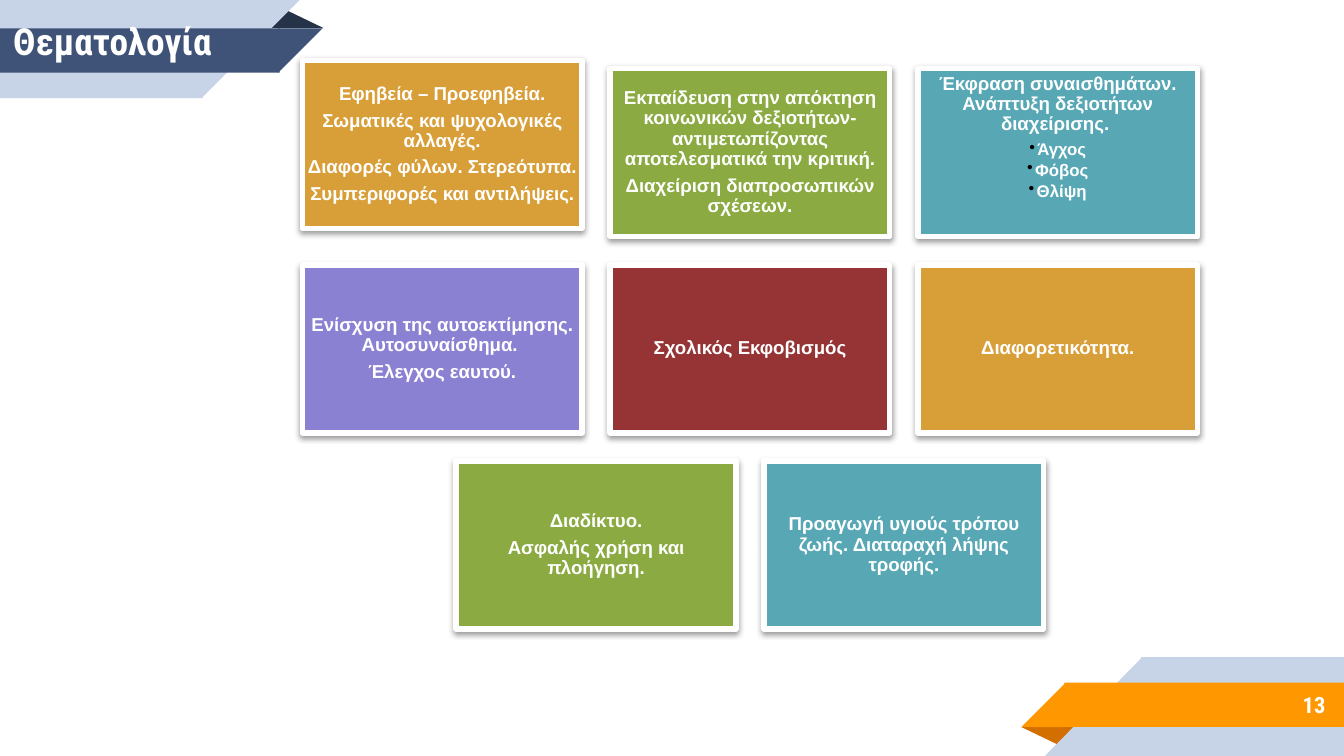
"""Builds the topics slide: eight cards in centred rows between two corner ribbons."""
from lxml.etree import SubElement
from pptx import Presentation
from pptx.dml.color import RGBColor
from pptx.enum.shapes import MSO_SHAPE as Shape
from pptx.enum.text import MSO_ANCHOR as Anchor, PP_ALIGN as Align
from pptx.oxml import parse_xml
from pptx.oxml.ns import nsdecls, qn
from pptx.util import Inches, Pt

WHITE = RGBColor(0xFF, 0xFF, 0xFF)
PALE = RGBColor(0xC7, 0xD3, 0xE6)
NAVY = RGBColor(0x3F, 0x53, 0x78)
DARK_NAVY = RGBColor(0x26, 0x32, 0x48)
ORANGE = RGBColor(0xFF, 0x98, 0x00)
DARK_ORANGE = RGBColor(0xD2, 0x6F, 0x00)
AMBER = RGBColor(0xD8, 0x9F, 0x39)
GREEN = RGBColor(0x8B, 0xAB, 0x42)
TEAL = RGBColor(0x57, 0xA7, 0xB5)
VIOLET = RGBColor(0x8B, 0x81, 0xD2)
RED = RGBColor(0x96, 0x33, 0x34)

PAGE_WIDTH = 10
PAGE_HEIGHT = PAGE_WIDTH * 9 / 16
CARD_WIDTH, CARD_HEIGHT = 2.08, 1.25
STEP_X, STEP_Y = 2.29, 1.46
CENTER_X, FIRST_TOP = 5.58, 0.51

ROWS = [
    [
        (AMBER, ["Εφηβεία – Προεφηβεία.", "Σωματικές και ψυχολογικές αλλαγές.",
                 "Διαφορές φύλων. Στερεότυπα.", "Συμπεριφορές και αντιλήψεις."], []),
        (GREEN, ["Εκπαίδευση στην απόκτηση κοινωνικών δεξιοτήτων- αντιμετωπίζοντας "
                 "αποτελεσματικά την κριτική.", "Διαχείριση διαπροσωπικών σχέσεων."], []),
        (TEAL, ["Έκφραση συναισθημάτων. Ανάπτυξη δεξιοτήτων διαχείρισης. "],
         ["Άγχος", "Φόβος", "Θλίψη"]),
    ],
    [
        (VIOLET, ["Ενίσχυση της αυτοεκτίμησης. Αυτοσυναίσθημα. ", "Έλεγχος εαυτού."], []),
        (RED, ["Σχολικός Εκφοβισμός"], []),
        (AMBER, ["Διαφορετικότητα."], []),
    ],
    [
        (GREEN, ["Διαδίκτυο.", "Ασφαλής χρήση και πλοήγηση."], []),
        (TEAL, ["Προαγωγή υγιούς τρόπου ζωής. Διαταραχή λήψης τροφής."], []),
    ],
]


def add_text(frame, text, size=10, font="Arial", align=Align.CENTER, before=0, after=0,
             spacing=1.0, bullet=False):
    """Write text as the next paragraph of the frame."""
    para = frame.paragraphs[0]
    if para.runs:
        para = frame.add_paragraph()
    para.alignment, para.line_spacing = align, spacing
    para.space_before, para.space_after = Pt(before), Pt(after)
    if bullet:
        props = para._p.get_or_add_pPr()
        props.set("lvl", "1")
        props.set("marL", str(Inches(0.06)))
        props.set("indent", str(-Inches(0.06)))
        color = SubElement(props, qn("a:buClr"))
        SubElement(color, qn("a:srgbClr"), val="000000")
        SubElement(props, qn("a:buChar"), char="•")
    span = para.add_run()
    span.text = text
    span.font.size, span.font.name, span.font.bold = Pt(size), font, True
    span.font.color.rgb = WHITE


class Deck:
    """Holds the style and the current page."""

    heading_font = "Roboto Condensed"

    def __init__(self):
        self.deck = Presentation()
        self.deck.slide_width, self.deck.slide_height = Inches(PAGE_WIDTH), Inches(PAGE_HEIGHT)
        self.page = self.deck.slides.add_slide(self.deck.slide_layouts[6])

    def shape(self, kind, box, color, turn=0, flip=False):
        """Add a plain filled shape."""
        item = self.page.shapes.add_shape(kind, *map(Inches, box))
        item.shadow.inherit = False
        item.fill.solid()
        item.fill.fore_color.rgb = color
        item.line.fill.background()
        item.rotation = turn
        if flip:
            item._element.spPr.find(qn("a:xfrm")).set("flipH", "1")
        return item

    def ribbon(self, fold, bands, turn):
        """Add a corner ribbon from its fold and its (bar, tip, color) bands."""
        fold_box, fold_color = fold
        self.shape(Shape.ISOSCELES_TRIANGLE, fold_box, fold_color,
                   180 - turn).adjustments[0] = 0.324
        for bar, tip, color in bands:
            self.shape(Shape.RECTANGLE, bar, color, turn, flip=True)
            self.shape(Shape.RIGHT_TRIANGLE, tip, color, turn, flip=True)

    def label(self, box, text, **style):
        """Add a one-line heading text."""
        frame = self.page.shapes.add_textbox(*map(Inches, box)).text_frame
        self.set_frame(frame, 0.1)
        add_text(frame, text, font=self.heading_font, **style)

    def set_frame(self, frame, inset, anchor=Anchor.MIDDLE):
        """Set wrapping, insets and anchor."""
        frame.word_wrap, frame.vertical_anchor = True, anchor
        frame.margin_left = frame.margin_right = Inches(inset)
        frame.margin_top = frame.margin_bottom = Inches(inset)

    def card(self, left, top, color, lines, bullets):
        """Add a white-framed card with a soft shadow."""
        card = self.shape(Shape.RECTANGLE, (left, top, CARD_WIDTH, CARD_HEIGHT), color)
        card.line.color.rgb, card.line.width = WHITE, Pt(3)
        effects = card._element.spPr.find(qn("a:effectLst"))
        effects.append(parse_xml(
            f'<a:outerShdw {nsdecls("a")} blurRad="{Pt(3.1)}" dist="{Pt(1.6)}" dir="5400000" '
            'rotWithShape="0"><a:srgbClr val="000000"><a:alpha val="38000"/></a:srgbClr>'
            '</a:outerShdw>'))
        frame = card.text_frame
        self.set_frame(frame, 0.04, Anchor.TOP if bullets else Anchor.MIDDLE)
        for line in lines:
            add_text(frame, line, after=3.5, spacing=0.9)
        for bullet in bullets:
            add_text(frame, bullet, size=9, after=1.35, spacing=0.9, bullet=True)


def main():
    deck = Deck()
    deck.ribbon(((7.6, 5.41, 0.43, 0.14), DARK_ORANGE), [
        ((8.49, 4.89, 1.51, 0.74), (7.77, 4.89, 0.73, 0.74), PALE),
        ((7.92, 5.08, 2.08, 0.33), (7.6, 5.08, 0.33, 0.33), ORANGE)], turn=0)
    deck.ribbon(((1.98, 0.07, 0.43, 0.14), DARK_NAVY), [
        ((0, 0, 1.51, 0.73), (1.5, 0, 0.73, 0.73), PALE),
        ((0, 0.21, 2.08, 0.33), (2.07, 0.21, 0.33, 0.33), NAVY)], turn=180)
    deck.label((8.33, 5.07, 1.63, 0.35), "13", size=12, align=Align.RIGHT)
    deck.label((0, 0.08, 3.07, 0.45), "Θεματολογία", size=20, align=Align.LEFT, before=6)
    for row, cards in enumerate(ROWS):
        row_left = CENTER_X - (STEP_X * (len(cards) - 1) + CARD_WIDTH) / 2
        for column, (color, lines, bullets) in enumerate(cards):
            lift = 0.06 if row == column == 0 else 0
            deck.card(row_left + column * STEP_X, FIRST_TOP + row * STEP_Y - lift,
                      color, lines, bullets)
    deck.deck.save("out.pptx")


if __name__ == "__main__":
    main()
